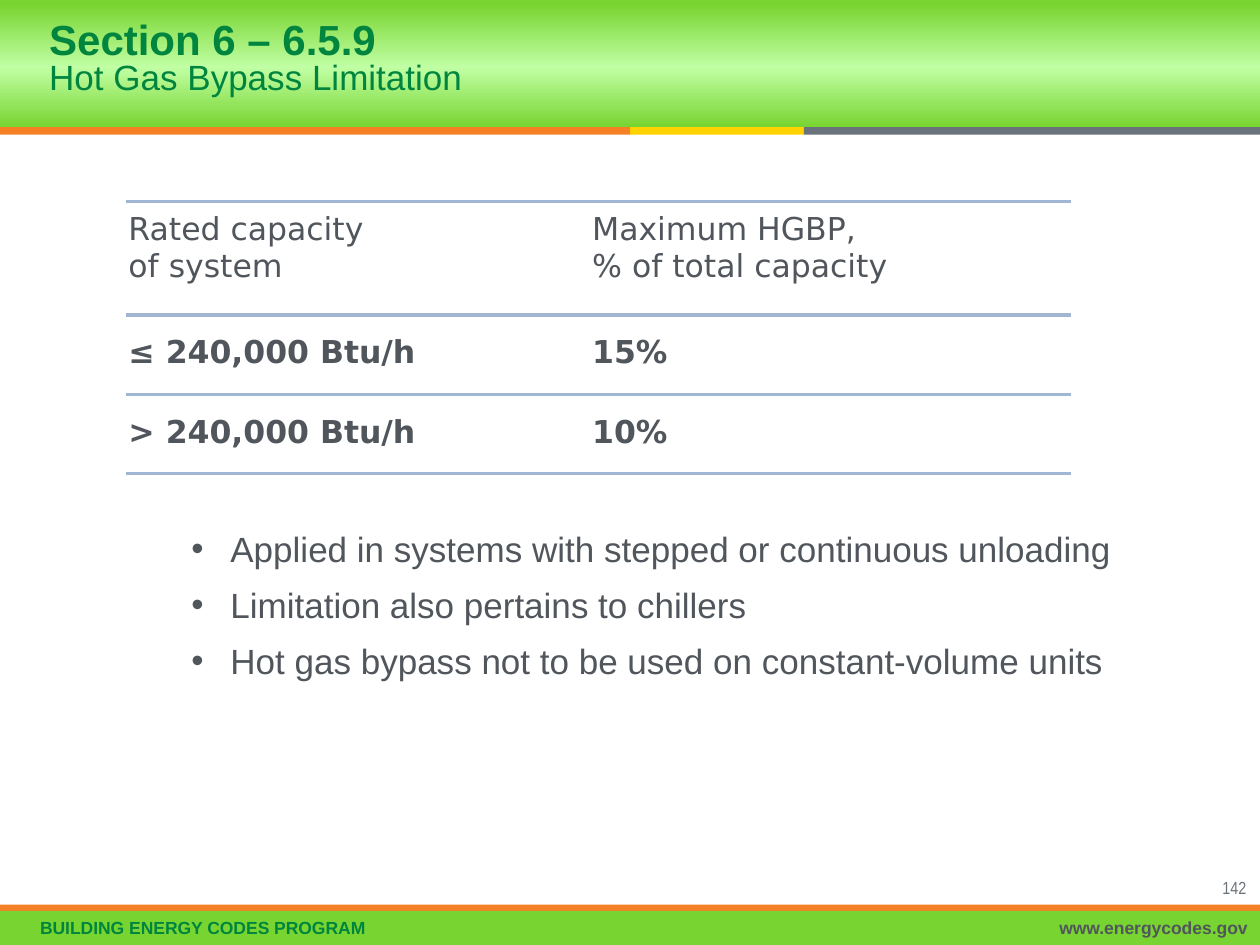
from copy import deepcopy
from dataclasses import dataclass

from pptx import Presentation
from pptx.dml.color import RGBColor
from pptx.enum.shapes import MSO_SHAPE as Shape
from pptx.enum.text import MSO_ANCHOR as Anchor, MSO_AUTO_SIZE as AutoSize, PP_ALIGN as Align
from pptx.oxml.ns import qn
from pptx.util import Inches, Pt
from lxml.etree import SubElement

COLUMNS, ROWS = 100, 75
NO_STYLE = "{2D5ABB26-0587-4C30-8999-92F81FD0307C}"


@dataclass(frozen=True)
class Theme:
    green: str = "78D430"
    pale_green: str = "C0FFA4"
    dark_green: str = "00853F"
    orange: str = "F58025"
    yellow: str = "FFD200"
    gray: str = "6A737B"
    text: str = "50565C"
    rule: str = "A1B6D3"
    font: str = "Arial"
    narrow_font: str = "Arial Narrow"
    table_font: str = "DejaVu Sans"
    heading_size: int = 24
    body_size: int = 20
    table_size: int = 18
    small_size: int = 10
    rule_width: float = 2.25


class SlideBuilder:
    """Draws on one slide; lengths are columns and rows of a 100 by 75 grid."""

    def __init__(self, presentation, theme):
        self.theme = theme
        self.column = presentation.slide_width / COLUMNS
        self.row = presentation.slide_height / ROWS
        self.slide = presentation.slides.add_slide(presentation.slide_layouts[5])

    def across(self, columns):
        return round(columns * self.column)

    def down(self, rows):
        return round(rows * self.row)

    def box(self, left, top, width, height):
        return self.across(left), self.down(top), self.across(width), self.down(height)

    def style(self, paragraph, color, size, bold=False, font=None):
        values = {"name": font or self.theme.font, "size": Pt(size), "bold": bold}
        for run in paragraph.runs:
            for name, value in values.items():
                setattr(run.font, name, value)
            run.font.color.rgb = RGBColor.from_string(color)

    def frame(self, shape, anchor):
        values = {"word_wrap": True, "auto_size": AutoSize.NONE, "vertical_anchor": anchor}
        for name, value in values.items():
            setattr(shape.text_frame, name, value)
        return shape.text_frame

    def bar(self, area, *colors):
        """A plain bar, or a vertical gradient from (position, color) stops."""
        shape = self.slide.shapes.add_shape(Shape.RECTANGLE, *self.box(*area))
        shape.shadow.inherit = False
        shape.line.fill.background()
        if len(colors) == 1:
            shape.fill.solid()
            shape.fill.fore_color.rgb = RGBColor.from_string(colors[0])
            return
        shape.fill.gradient()
        shape.fill.gradient_angle = 90
        stop_list = shape._element.spPr.find(".//" + qn("a:gsLst"))
        stop_list.insert(1, deepcopy(stop_list[0]))
        for stop, (position, color) in zip(shape.fill.gradient_stops, colors):
            stop.position = position
            stop.color.rgb = RGBColor.from_string(color)

    def title(self, area, heading, subheading):
        title = self.slide.shapes.title
        title.left, title.top, title.width, title.height = self.box(*area)
        self.slide.shapes._spTree.append(title._element)  # in front of the band
        frame = self.frame(title, Anchor.MIDDLE)
        frame.text = f"{heading}\n{subheading}"
        sizes = (self.theme.heading_size, self.theme.body_size)
        for paragraph, size, bold in zip(frame.paragraphs, sizes, (True, False)):
            paragraph.alignment = Align.LEFT
            paragraph.line_spacing = 0.8
            self.style(paragraph, self.theme.dark_green, size, bold)

    def label(self, area, text, color, align=Align.LEFT, **font):
        shape = self.slide.shapes.add_textbox(*self.box(*area))
        paragraph = self.frame(shape, Anchor.MIDDLE).paragraphs[0]
        paragraph.text = text
        paragraph.alignment = align
        self.style(paragraph, color, self.theme.small_size, **font)

    def bullets(self, area, items):
        shape = self.slide.shapes.add_textbox(*self.box(*area))
        frame = self.frame(shape, Anchor.TOP)
        frame.text = "\n".join(items)
        indent = Inches(0.31)
        for index, paragraph in enumerate(frame.paragraphs):
            properties = paragraph._p.get_or_add_pPr()
            properties.set("marL", str(indent))
            properties.set("indent", str(-indent))
            SubElement(properties, qn("a:buFont"), typeface=self.theme.font)
            SubElement(properties, qn("a:buChar"), char="•")
            paragraph.space_before = Pt(8 if index else 0)
            self.style(paragraph, self.theme.text, self.theme.body_size)

    def rule(self, cell, index, side):
        """Add a colored border to one side of a cell."""
        line = cell._tc.get_or_add_tcPr().makeelement(
            qn(f"a:{side}"), {"w": str(Pt(self.theme.rule_width))})
        fill = SubElement(line, qn("a:solidFill"))
        SubElement(fill, qn("a:srgbClr"), val=self.theme.rule)
        cell._tc.tcPr.insert(index, line)

    def table(self, left, top, widths, heights, rows):
        area = self.box(left, top, sum(widths), sum(heights))
        table = self.slide.shapes.add_table(len(rows), len(widths), *area).table
        table._tbl.tblPr.find(qn("a:tableStyleId")).text = NO_STYLE
        table.horz_banding = False
        for column, width in zip(table.columns, widths):
            column.width = self.across(width)
        for row_index, (row, height, texts) in enumerate(zip(table.rows, heights, rows)):
            row.height = self.down(height)
            header = row_index == 0
            values = {"margin_left": Inches(0.02), "margin_right": 0,
                      "margin_top": Inches(0.08 if header else 0),
                      "margin_bottom": Inches(0 if header else 0.03),
                      "vertical_anchor": Anchor.TOP if header else Anchor.MIDDLE}
            for cell, text in zip(row.cells, texts):
                for name, value in values.items():
                    setattr(cell, name, value)
                cell.fill.background()
                for index, side in enumerate(("lnT", "lnB")):
                    self.rule(cell, index, side)
                cell.text = text
                for paragraph in cell.text_frame.paragraphs:
                    self.style(paragraph, self.theme.text, self.theme.table_size,
                               not header, self.theme.table_font)


def main():
    presentation = Presentation()
    presentation.slide_width, presentation.slide_height = Inches(10), Inches(7.5)
    theme = Theme()
    builder = SlideBuilder(presentation, theme)

    # Header band and the stripe under it
    builder.bar((0, 0, COLUMNS, 10.1),
                (0, theme.green), (0.47, theme.pale_green), (0.97, theme.green))
    left = 0
    for width, color in ((50, theme.orange), (13.8, theme.yellow), (36.2, theme.gray)):
        builder.bar((left, 10.1, width, 0.6), color)
        left += width
    builder.title((2.9, 0.1, 93.6, 9.4), "Section 6 – 6.5.9", "Hot Gas Bypass Limitation")

    # Capacity limits
    builder.table(10, 16, (36.8, 38.2), (9, 6.3, 6.3), (
        ("Rated capacity\nof system", "Maximum HGBP,\n% of total capacity"),
        ("≤ 240,000 Btu/h", "15%"),
        ("> 240,000 Btu/h", "10%"),
    ))

    # Notes on use
    builder.bullets((14.2, 41.4, 82.9, 23.6), (
        "Applied in systems with stepped or continuous unloading",
        "Limitation also pertains to chillers",
        "Hot gas bypass not to be used on constant-volume units",
    ))

    # Footer
    builder.bar((0, 71.8, COLUMNS, 0.5), theme.orange)
    builder.bar((0, 72.3, COLUMNS, 2.7), theme.green)
    builder.label((2.2, 72.3, 57, 2.6), "BUILDING ENERGY CODES PROGRAM",
                  theme.dark_green, bold=True)
    builder.label((59.9, 72.3, 40.1, 2.6), "www.energycodes.gov",
                  theme.text, Align.RIGHT, bold=True)
    builder.label((92.8, 69, 7.1, 2.8), "142", theme.gray, Align.RIGHT,
                  font=theme.narrow_font)

    presentation.save("out.pptx")


if __name__ == "__main__":
    main()
